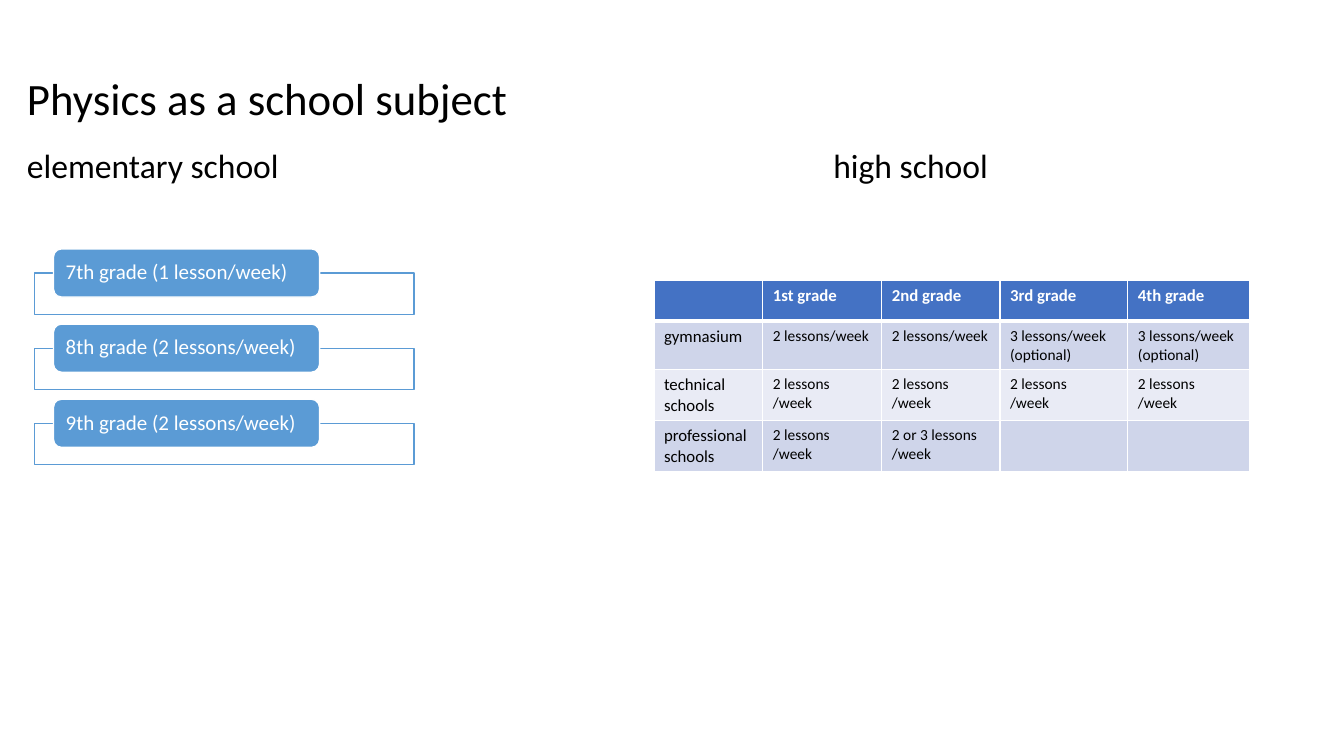
"""Build the slide on physics as a school subject."""
from lxml.etree import SubElement
from pptx import Presentation
from pptx.dml.color import RGBColor
from pptx.enum.shapes import MSO_SHAPE
from pptx.enum.text import MSO_ANCHOR, PP_ALIGN
from pptx.oxml.ns import qn
from pptx.util import Pt

BLACK = RGBColor(0x00, 0x00, 0x00)
WHITE = RGBColor(0xFF, 0xFF, 0xFF)
BLUE = RGBColor(0x5B, 0x9B, 0xD5)
HEADER_BLUE = RGBColor(0x44, 0x72, 0xC4)
DARK_BAND = RGBColor(0xCF, 0xD5, 0xEA)
LIGHT_BAND = RGBColor(0xE9, 0xEB, 0xF5)
FONT = "Calibri"

TITLE = "Physics as a school subject"
HEADINGS = ["elementary school", "high school"]
ELEMENTARY_GRADES = [
    "7th grade (1 lesson/week)",
    "8th grade (2 lessons/week)",
    "9th grade (2 lessons/week)",
]
TWO_LESSONS = ["2 lessons", "/week"]
OPTIONAL = ["3 lessons/week", "(optional)"]
HIGH_SCHOOL = [
    [[], ["1st grade"], ["2nd grade"], ["3rd grade"], ["4th grade"]],
    [["gymnasium"], ["2 lessons/week"], ["2 lessons/week"], OPTIONAL, OPTIONAL],
    [["technical schools"], TWO_LESSONS, TWO_LESSONS, TWO_LESSONS, TWO_LESSONS],
    [["professional schools"], TWO_LESSONS, ["2 or 3 lessons", "/week"], [], []],
]
COLUMN_WIDTHS = [77.8, 85, 84.4, 91.4, 86.8]
ROW_HEIGHTS = [29, 34.6, 36.4, 36.4]
ROW_FILLS = [HEADER_BLUE, DARK_BAND, LIGHT_BAND, DARK_BAND]

TEXT_LEFT, TEXT_WIDTH = 12.2, 935.3
HIGH_SCHOOL_TAB = 576
FRAME_LEFT, FRAME_WIDTH, FRAME_HEIGHT = 24.5, 271.4, 29.5
LABEL_LEFT, LABEL_TOP, LABEL_WIDTH, LABEL_HEIGHT = 38.2, 177.8, 190.1, 34.4
GRADE_STEP = 53.7
TABLE_LEFT, TABLE_TOP = 467.1, 200.5


def add_run(paragraph, text, size, color, bold=False):
    run = paragraph.add_run()
    run.text = text
    run.font.name = FONT
    run.font.size = Pt(size)
    run.font.bold = bold
    run.font.color.rgb = color


def add_text(slide, top, height, text, size, anchor):
    box = slide.shapes.add_textbox(Pt(TEXT_LEFT), Pt(top), Pt(TEXT_WIDTH), Pt(height))
    frame = box.text_frame
    frame.word_wrap = True
    frame.vertical_anchor = anchor
    paragraph = frame.paragraphs[0]
    paragraph.line_spacing = 0.9
    add_run(paragraph, text, size, BLACK)
    return paragraph


def add_box(slide, kind, left, top, width, height, fill, line):
    shape = slide.shapes.add_shape(kind, Pt(left), Pt(top), Pt(width), Pt(height))
    shape.shadow.inherit = False
    shape.fill.solid()
    shape.fill.fore_color.rgb = fill
    shape.line.color.rgb = line
    shape.line.width = Pt(1)
    return shape


def add_grade(slide, index, text):
    top = LABEL_TOP + index * GRADE_STEP
    frame_shape = add_box(slide, MSO_SHAPE.RECTANGLE, FRAME_LEFT, top + LABEL_HEIGHT / 2,
                          FRAME_WIDTH, FRAME_HEIGHT, WHITE, BLUE)
    color = frame_shape.fill._xPr.find(qn("a:solidFill"))[0]
    SubElement(color, qn("a:alpha"), val="90000")
    label = add_box(slide, MSO_SHAPE.ROUNDED_RECTANGLE, LABEL_LEFT, top,
                    LABEL_WIDTH, LABEL_HEIGHT, BLUE, WHITE)
    frame = label.text_frame
    frame.word_wrap = True
    frame.vertical_anchor = MSO_ANCHOR.MIDDLE
    frame.margin_top = frame.margin_bottom = Pt(0)
    paragraph = frame.paragraphs[0]
    paragraph.alignment = PP_ALIGN.LEFT
    paragraph.line_spacing = 0.9
    add_run(paragraph, text, 15, WHITE)


def add_borders(cell, bottom_width):
    properties = cell._tc.get_or_add_tcPr()
    for side, width in (("L", 1), ("R", 1), ("T", 1), ("B", bottom_width)):
        line = SubElement(properties, qn(f"a:ln{side}"), w=str(Pt(width)))
        fill = SubElement(line, qn("a:solidFill"))
        SubElement(fill, qn("a:srgbClr"), val=str(WHITE))


def fill_cell(cell, lines, row, column):
    is_header = row == 0
    add_borders(cell, 3 if is_header else 1)
    cell.fill.solid()
    cell.fill.fore_color.rgb = ROW_FILLS[row]
    size = 12 if is_header or column == 0 else 11
    frame = cell.text_frame
    for index, text in enumerate(lines):
        paragraph = frame.add_paragraph() if index else frame.paragraphs[0]
        add_run(paragraph, text, size, WHITE if is_header else BLACK, is_header)


def add_lesson_table(slide):
    table = slide.shapes.add_table(
        len(ROW_HEIGHTS), len(COLUMN_WIDTHS), Pt(TABLE_LEFT), Pt(TABLE_TOP),
        Pt(sum(COLUMN_WIDTHS)), Pt(sum(ROW_HEIGHTS))).table
    for column, width in zip(table.columns, COLUMN_WIDTHS):
        column.width = Pt(width)
    for row, height in zip(table.rows, ROW_HEIGHTS):
        row.height = Pt(height)
    for row, cells in enumerate(HIGH_SCHOOL):
        for column, lines in enumerate(cells):
            fill_cell(table.cell(row, column), lines, row, column)


def main():
    presentation = Presentation()
    presentation.slide_width, presentation.slide_height = Pt(960), Pt(540)
    slide = presentation.slides.add_slide(presentation.slide_layouts[6])
    add_text(slide, 46.8, 46.1, TITLE, 32, MSO_ANCHOR.BOTTOM)
    headings = add_text(slide, 103, 395.3, "\t".join(HEADINGS), 24, MSO_ANCHOR.TOP)
    tabs = SubElement(headings._p.get_or_add_pPr(), qn("a:tabLst"))
    SubElement(tabs, qn("a:tab"), pos=str(Pt(HIGH_SCHOOL_TAB)), algn="l")
    for index, text in enumerate(ELEMENTARY_GRADES):
        add_grade(slide, index, text)
    add_lesson_table(slide)
    presentation.save("out.pptx")


if __name__ == "__main__":
    main()
